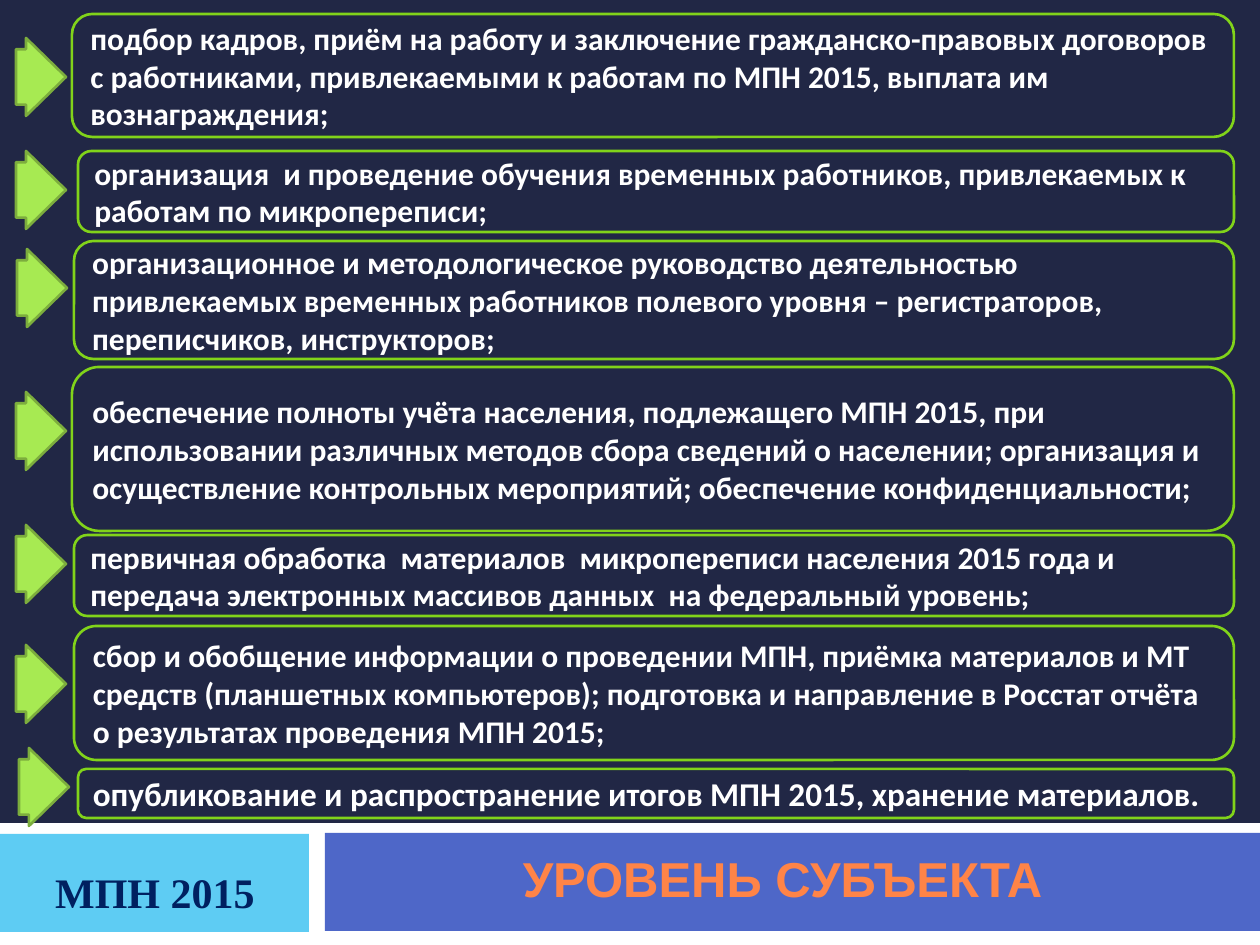
import pptx
import pptx.util
import pptx.dml.color
import pptx.enum.shapes
import pptx.enum.text

SHAPES = pptx.enum.shapes.MSO_SHAPE
ALIGN = pptx.enum.text.PP_ALIGN
ANCHOR = pptx.enum.text.MSO_ANCHOR
EMU_PER_PX = 914400 / 126
RIGHT_EDGE = 1234
ARROW_SIZE = (50, 78)

TASKS = [
    (72, 14, 123, 16, 38, 18, "подбор кадров, приём на работу и заключение гражданско-правовых договоров с работниками, привлекаемыми к работам по МПН 2015, выплата им вознаграждения;"),
    (78, 151, 81, 16, 151, 18, "организация  и проведение обучения временных работников, привлекаемых к работам по микропереписи;"),
    (74, 241, 118, 17, 249, 18, "организационное и методологическое руководство деятельностью привлекаемых временных работников полевого уровня – регистраторов, переписчиков, инструкторов;"),
    (72, 367, 164, 16, 392, 18, "обеспечение полноты учёта населения, подлежащего МПН 2015, при использовании различных методов сбора сведений о населении; организация и осуществление контрольных мероприятий; обеспечение конфиденциальности;"),
    (74, 535, 81, 16, 525, 18, "первичная обработка  материалов  микропереписи населения 2015 года и передача электронных массивов данных  на федеральный уровень;"),
    (74, 626, 134, 16, 645, 18, "сбор и обобщение информации о проведении МПН, приёмка материалов и МТ средств (планшетных компьютеров); подготовка и направление в Росстат отчёта о результатах проведения МПН 2015;"),
    (78, 769, 49, 19, 748, 19, "опубликование и распространение итогов МПН 2015, хранение материалов."),
]


def px(length):
    return pptx.util.Emu(round(length * EMU_PER_PX))


def color(value):
    return pptx.dml.color.RGBColor.from_string(value)


class SlideBuilder:
    background = "212745"
    arrow_fill = "A7EA52"
    arrow_line = "7CAD3D"
    box_line = "81D31A"
    line_width = 1.5

    def __init__(self, presentation):
        self.slide = presentation.slides.add_slide(presentation.slide_layouts[5])
        fill = self.slide.background.fill
        fill.solid()
        fill.fore_color.rgb = color(self.background)

    def shape(self, kind, left, top, width, height, fill=None, line=None):
        shape = self.slide.shapes.add_shape(kind, px(left), px(top), px(width), px(height))
        shape.shadow.inherit = False
        if fill:
            shape.fill.solid()
            shape.fill.fore_color.rgb = color(fill)
        else:
            shape.fill.background()
        if line:
            shape.line.color.rgb = color(line)
            shape.line.width = pptx.util.Pt(self.line_width)
        else:
            shape.line.fill.background()
        return shape

    def set_text(self, shape, text, size, font_name, font_color, align):
        frame = shape.text_frame
        frame.word_wrap = True
        frame.vertical_anchor = ANCHOR.MIDDLE
        frame.text = text
        paragraph = frame.paragraphs[0]
        paragraph.alignment = align
        paragraph.font.size = pptx.util.Pt(size)
        paragraph.font.name = font_name
        paragraph.font.bold = True
        paragraph.font.color.rgb = color(font_color)
        return paragraph

    def band(self, left, top, width, height, fill):
        self.shape(SHAPES.RECTANGLE, left, top, width, height, fill)

    def arrow(self, left, top):
        arrow = self.shape(SHAPES.RIGHT_ARROW, left, top, *ARROW_SIZE, self.arrow_fill, self.arrow_line)
        arrow.adjustments[0] = 0.71
        arrow.adjustments[1] = 0.8

    def task(self, left, top, height, size, text):
        box = self.shape(SHAPES.ROUNDED_RECTANGLE, left, top, RIGHT_EDGE - left, height, line=self.box_line)
        self.set_text(box, text, size, "Calibri", "FFFFFF", ALIGN.LEFT)

    def title(self, left, top, width, height, text):
        title = self.slide.shapes.title
        title.left, title.top, title.width, title.height = map(px, (left, top, width, height))
        self.set_text(title, text, 28, "Arial", "FF8447", ALIGN.CENTER)
        tree = title.element.getparent()
        tree.append(title.element)

    def label(self, left, top, width, height, text):
        label = self.slide.shapes.add_textbox(px(left), px(top), px(width), px(height))
        paragraph = self.set_text(label, text, 24, "Times New Roman", "002060", ALIGN.RIGHT)
        paragraph.line_spacing = 1.1


def main():
    presentation = pptx.Presentation()
    presentation.slide_width = px(1260)
    presentation.slide_height = px(945)
    builder = SlideBuilder(presentation)
    builder.band(0, 823, 1260, 122, "FFFFFF")
    builder.band(-1, 834, 310, 98, "5ECCF3")
    builder.band(325, 833, 935, 98, "4E67C8")
    for left, top, height, arrow_left, arrow_top, size, text in TASKS:
        builder.arrow(arrow_left, arrow_top)
        builder.task(left, top, height, size, text)
    builder.title(335, 842, 895, 72, "УРОВЕНЬ СУБЪЕКТА")
    builder.label(34, 834, 233, 111, "МПН 2015")
    presentation.save("out.pptx")


if __name__ == "__main__":
    main()
